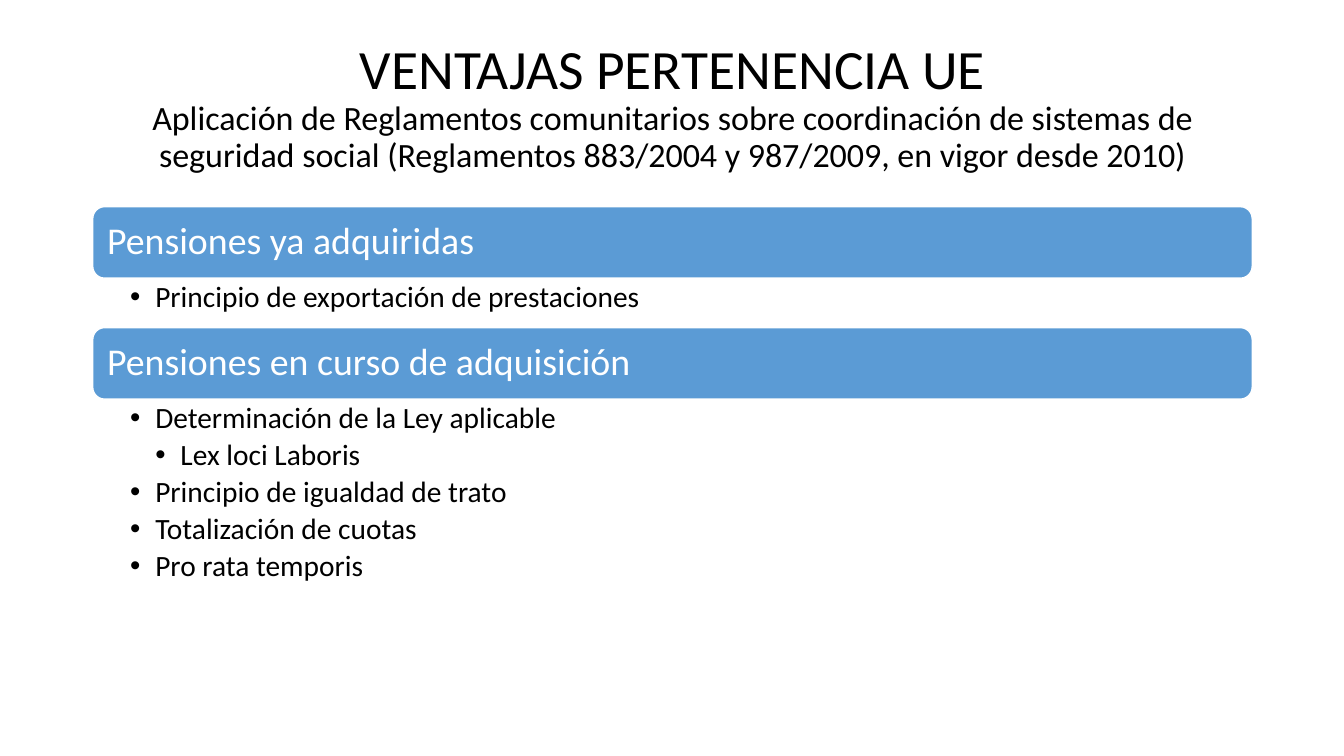
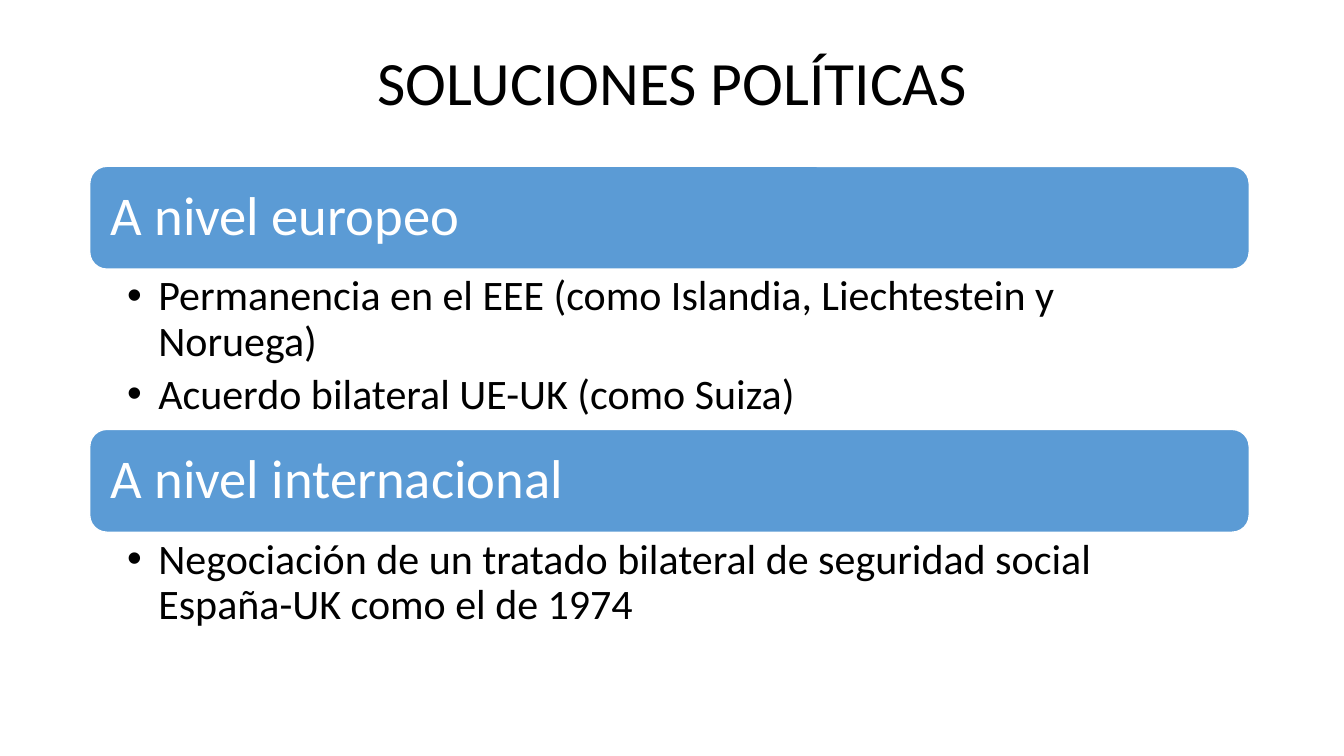
from lxml.etree import SubElement
from pptx import Presentation
from pptx.dml.color import RGBColor
from pptx.enum.shapes import MSO_SHAPE
from pptx.enum.text import MSO_ANCHOR, MSO_AUTO_SIZE, PP_ALIGN
from pptx.oxml.ns import qn
from pptx.util import Inches, Pt

BLUE = RGBColor(0x5B, 0x9B, 0xD5)
WHITE = RGBColor(0xFF, 0xFF, 0xFF)
BLACK = RGBColor(0, 0, 0)
FONT = "Calibri"
LINE_SPACING = 0.9
CONTENT_WIDTH = 11.5
TITLE_LEFT = 0.92
LIST_INSET = 0.37
TWO_CONTENT_LAYOUT = 3

SLIDES = [
    {
        "title": [
            ("VENTAJAS PERTENENCIA UE", 39.6),
            ("Aplicación de Reglamentos comunitarios sobre coordinación de sistemas de "
             "seguridad social (Reglamentos 883/2004 y 987/2009, en vigor desde 2010)", 24.3),
        ],
        "title_top": 0.35, "title_height": 1.45,
        "left": 0.92, "top": 2.05, "band_height": 0.71,
        "band_size": 27, "list_size": 21, "indent": 0.25,
        "sections": [
            ("Pensiones ya adquiridas", 0.49,
             [(0, "Principio de exportación de prestaciones")]),
            ("Pensiones en curso de adquisición", 2.75,
             [(0, "Determinación de la Ley aplicable"),
              (1, "Lex loci Laboris"),
              (0, "Principio de igualdad de trato"),
              (0, "Totalización de cuotas"),
              (0, "Pro rata temporis")]),
        ],
    },
    {
        "title": [("SOLUCIONES POLÍTICAS", 44)],
        "title_top": 0.4, "title_height": 0.89,
        "left": 0.89, "top": 1.65, "band_height": 1.02,
        "band_size": 39, "list_size": 30, "indent": 0.31,
        "sections": [
            ("A nivel europeo", 1.59,
             [(0, "Permanencia en el EEE (como Islandia, Liechtestein y Noruega)"),
              (0, "Acuerdo bilateral UE-UK (como Suiza)")]),
            ("A nivel internacional", 1.04,
             [(0, "Negociación de un tratado bilateral de seguridad social "
                  "España-UK como el de 1974")]),
        ],
    },
]


def place(shape, left, top, height):
    shape.left, shape.top = Inches(left), Inches(top)
    shape.width, shape.height = Inches(CONTENT_WIDTH), Inches(height)


def set_frame(frame, anchor, left, vertical, right):
    frame.word_wrap = True
    frame.auto_size = MSO_AUTO_SIZE.NONE
    frame.vertical_anchor = anchor
    frame.margin_left, frame.margin_right = Inches(left), Inches(right)
    frame.margin_top = frame.margin_bottom = Inches(vertical)


def style_paragraph(paragraph, color, alignment, size=None):
    paragraph.alignment = alignment
    paragraph.line_spacing = LINE_SPACING
    paragraph.space_before = Pt(0)
    paragraph.font.name = FONT
    paragraph.font.color.rgb = color
    if size:
        paragraph.font.size = Pt(size)


def add_bullet(paragraph, level, indent):
    paragraph.level = level
    properties = paragraph._p.get_or_add_pPr()
    properties.set("marL", str(Inches(indent * (level + 1))))
    properties.set("indent", str(-Inches(indent)))
    SubElement(properties, qn("a:buChar")).set("char", "•")


def fill_title(title, content):
    place(title, TITLE_LEFT, content["title_top"], content["title_height"])
    set_frame(title.text_frame, MSO_ANCHOR.MIDDLE, 0.1, 0.05, 0.1)
    paragraph = title.text_frame.paragraphs[0]
    style_paragraph(paragraph, BLACK, PP_ALIGN.CENTER)
    for index, (text, size) in enumerate(content["title"]):
        if index:
            paragraph.add_line_break()
        run = paragraph.add_run()
        run.text = text
        run.font.size = Pt(size)


def add_band(slide, text, top, content):
    band = slide.shapes.add_shape(MSO_SHAPE.ROUNDED_RECTANGLE, 0, 0, 0, 0)
    place(band, content["left"], top, content["band_height"])
    band.shadow.inherit = False
    band.fill.solid()
    band.fill.fore_color.rgb = BLUE
    band.line.color.rgb = WHITE
    band.line.width = Pt(1)
    inset = content["band_size"] * 0.004
    set_frame(band.text_frame, MSO_ANCHOR.MIDDLE, inset, inset, inset)
    paragraph = band.text_frame.paragraphs[0]
    paragraph.text = text
    style_paragraph(paragraph, WHITE, PP_ALIGN.LEFT, content["band_size"])


def fill_list(body, items, top, height, content):
    size = content["list_size"]
    place(body, content["left"], top, height)
    frame = body.text_frame
    set_frame(frame, MSO_ANCHOR.TOP, LIST_INSET, size / 550, size / 100)
    for index, (level, text) in enumerate(items):
        paragraph = frame.add_paragraph() if index else frame.paragraphs[0]
        paragraph.text = text
        style_paragraph(paragraph, BLACK, PP_ALIGN.LEFT, size)
        paragraph.space_after = Pt(size * 0.18)
        add_bullet(paragraph, level, content["indent"])


def build_slide(presentation, content):
    slide = presentation.slides.add_slide(presentation.slide_layouts[TWO_CONTENT_LAYOUT])
    fill_title(slide.shapes.title, content)
    top = content["top"]
    for index, (heading, list_height, items) in enumerate(content["sections"], start=1):
        add_band(slide, heading, top, content)
        top += content["band_height"]
        fill_list(slide.placeholders[index], items, top, list_height, content)
        top += list_height


def main():
    presentation = Presentation()
    presentation.slide_width = Inches(13.33)
    presentation.slide_height = Inches(7.5)
    for content in SLIDES:
        build_slide(presentation, content)
    presentation.save("out.pptx")


if __name__ == "__main__":
    main()
